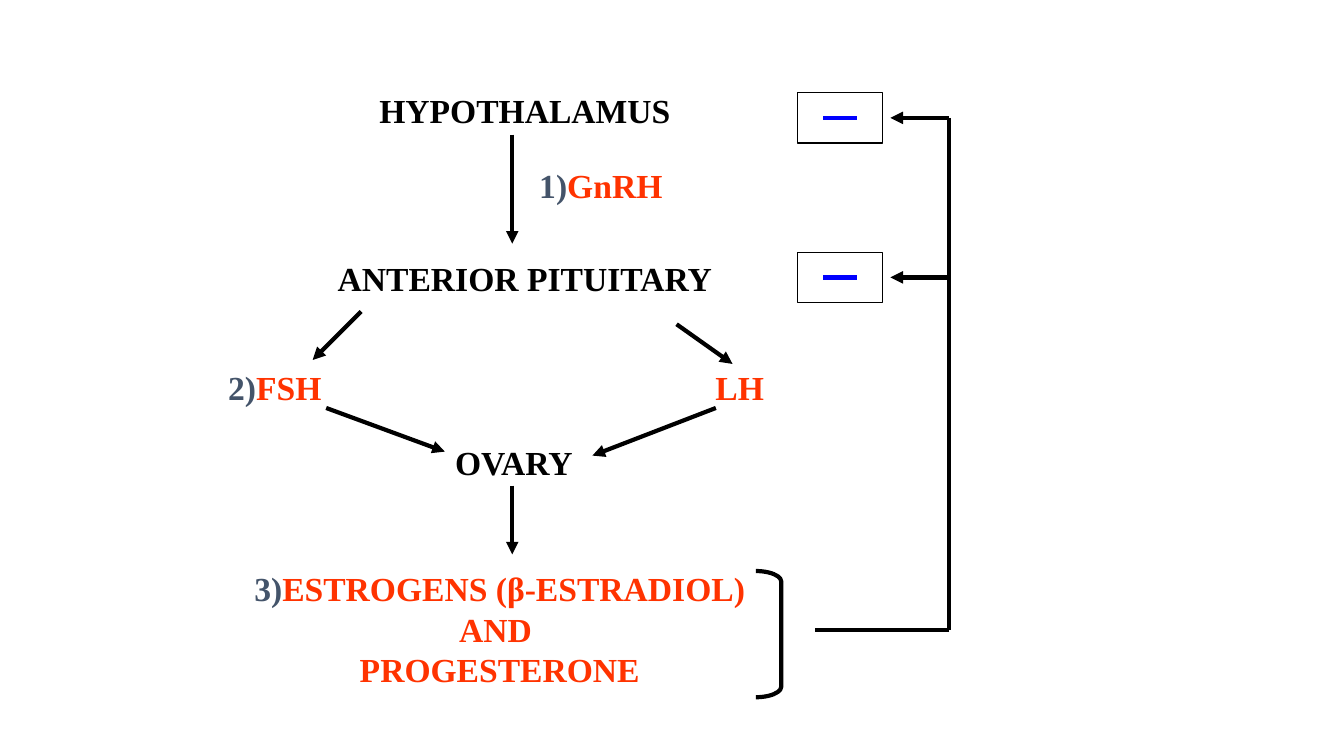
from lxml import etree
from pptx import Presentation
from pptx import util as u
from pptx.dml.color import RGBColor
from pptx.enum import shapes, text
from pptx.oxml import ns

BLACK, BLUE, RED, SLATE = "000000", "0000FF", "FF3300", "44546A"


def rgb(value):
    return RGBColor.from_string(value)


class Diagram:
    font = "Times New Roman"
    size = u.Pt(24)
    thick, thin = 3, 0.75

    def __init__(self, slide):
        self.s = slide

    def label(self, x, y, w, lines, h=1.06, align=text.PP_ALIGN.LEFT):
        """Each line is a list of (words, colour) runs."""
        sp = self.s.shapes.add_textbox(u.Cm(x), u.Cm(y), u.Cm(w), u.Cm(h))
        tf = sp.text_frame
        tf.word_wrap = True
        for i, line in enumerate(lines):
            p = tf.add_paragraph() if i else tf.paragraphs[0]
            p.alignment = align
            p.line_spacing = 0.8
            p.space_before = u.Pt(5.8 if i else 0)
            for words, color in line:
                r = p.add_run()
                r.text = words
                r.font.name, r.font.size, r.font.bold = self.font, self.size, True
                r.font.color.rgb = rgb(color)

    def line(self, x1, y1, x2, y2, color=BLACK, arrow=False):
        c = self.s.shapes.add_connector(
            shapes.MSO_CONNECTOR.STRAIGHT, u.Cm(x1), u.Cm(y1), u.Cm(x2), u.Cm(y2))
        c.line.color.rgb = rgb(color)
        c.line.width = u.Pt(self.thick)
        if arrow:
            ln = c.line._get_or_add_ln()
            etree.SubElement(ln, ns.qn("a:tailEnd"), type="triangle")
        etree.SubElement(c._element.spPr, ns.qn("a:effectLst"))

    def outline(self, kind, x, y, w, h, width):
        sp = self.s.shapes.add_shape(kind, u.Cm(x), u.Cm(y), u.Cm(w), u.Cm(h))
        sp.shadow.inherit = False
        sp.fill.background()
        sp.line.color.rgb = rgb(BLACK)
        sp.line.width = u.Pt(width)
        return sp

    def inhibition(self, y, trunk):
        """Minus sign in a box, with the feedback arrow from the trunk line."""
        h = 1.27
        self.outline(shapes.MSO_SHAPE.RECTANGLE, 20.11, y - h / 2, 2.12, h, self.thin)
        self.line(20.75, y, 21.59, y, BLUE)
        self.line(trunk, y, 22.44, y, arrow=True)


def main():
    prs = Presentation()
    prs.slide_width, prs.slide_height = u.Cm(33.87), u.Cm(19.05)
    d = Diagram(prs.slides.add_slide(prs.slide_layouts[6]))

    for x, y, w, runs in [
        (9.31, 2.33, 8.06, [("HYPOTHALAMUS", BLACK)]),
        (13.34, 4.23, 3.81, [("1)", SLATE), ("GnRH", RED)]),
        (8.26, 6.56, 10.8, [("ANTERIOR PITUITARY", BLACK)]),
        (5.5, 9.31, 3.39, [("2)", SLATE), ("FSH", RED)]),
        (17.78, 9.31, 1.91, [("LH", RED)]),
        (11.22, 11.22, 4.45, [("OVARY", BLACK)]),
    ]:
        d.label(x, y, w, [runs])
    d.label(6.14, 14.39, 12.91, [
        [("3)", SLATE), ("ESTROGENS (β-ESTRADIOL)", RED)],
        [("AND ", RED)],
        [("PROGESTERONE", RED)],
    ], h=2.96, align=text.PP_ALIGN.CENTER)

    for ends in [
        (12.91, 3.39, 12.91, 6.14),    # hypothalamus to pituitary
        (9.1, 7.85, 7.88, 9.07),       # pituitary to FSH
        (17.05, 8.17, 18.46, 9.17),    # pituitary to LH
        (8.22, 10.28, 11.21, 11.38),   # FSH to ovary
        (18.04, 10.28, 14.93, 11.48),  # LH to ovary
        (12.91, 12.24, 12.91, 13.97),  # ovary to hormones
    ]:
        d.line(*ends, arrow=True)

    trunk, top, bottom = 23.92, 2.97, 15.88
    for y in (top, 6.99):
        d.inhibition(y, trunk)
    d.line(trunk, top, trunk, bottom)
    d.line(trunk, bottom, 20.53, bottom)
    bracket = d.outline(shapes.MSO_SHAPE.RIGHT_BRACKET, 19.05, 14.39, 0.64, 3.18, d.thick)
    bracket.adjustments[0] = 0.417

    prs.save("out.pptx")


if __name__ == "__main__":
    main()
